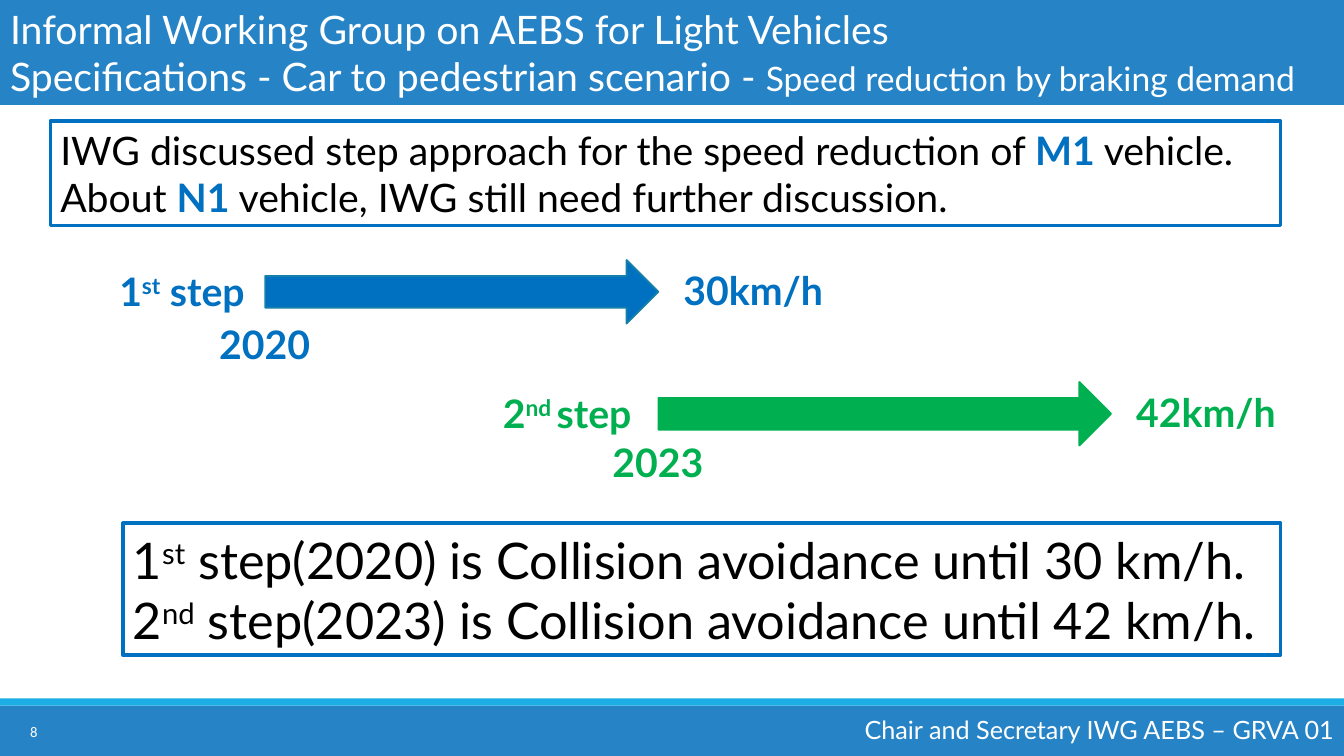
from pptx import Presentation
from pptx.dml.color import RGBColor
from pptx.enum.shapes import MSO_SHAPE as Shape
from pptx.enum.text import MSO_ANCHOR as Anchor, MSO_AUTO_SIZE as AutoSize, PP_ALIGN as Align
from pptx.util import Inches, Pt

BAND = RGBColor(0x26, 0x83, 0xC6)
STRIPE = RGBColor(0x1C, 0xAD, 0xE4)
BLUE = RGBColor(0x00, 0x70, 0xC0)
BLUE_EDGE = RGBColor(0x15, 0x80, 0xA9)
GREEN = RGBColor(0x00, 0xB0, 0x50)
WHITE = RGBColor(0xFF, 0xFF, 0xFF)
BLACK = RGBColor(0x00, 0x00, 0x00)
WIDTH, HEIGHT = 13.33, 7.5
LINE_HEIGHT = 0.57
SUPER = {"baseline": "30000"}

presentation = Presentation()
presentation.slide_width, presentation.slide_height = Inches(WIDTH), Inches(HEIGHT)
slide = presentation.slides.add_slide(presentation.slide_layouts[5])


def add_block(kind, box, fill=None, line=None, line_width=1.25):
    """Add a preset shape, or a text box when kind is None."""
    place = [Inches(length) for length in box]
    if kind is None:
        return slide.shapes.add_textbox(*place)
    shape = slide.shapes.add_shape(kind, *place)
    shape.shadow.inherit = False
    if fill is None:
        shape.fill.background()
    else:
        shape.fill.solid()
        shape.fill.fore_color.rgb = fill
    if line is None:
        shape.line.fill.background()
    else:
        shape.line.color.rgb = line
        shape.line.width = Pt(line_width)
    return shape


def write(shape, lines, size, color, align=Align.LEFT, anchor=Anchor.TOP, bold=False, name="Lato"):
    """Write lines of (text, format) runs; a format overrides the line's own."""
    frame = shape.text_frame
    frame.word_wrap = True
    frame.auto_size = AutoSize.NONE
    frame.vertical_anchor = anchor
    for index, runs in enumerate(lines):
        paragraph = frame.add_paragraph() if index else frame.paragraphs[0]
        paragraph.alignment = align
        for text, changes in runs:
            style = {"size": size, "color": color, "bold": bold, "name": name} | changes
            run = paragraph.add_run()
            run.text = text
            run.font.color.rgb = style.pop("color")
            run.font.size = Pt(style.pop("size"))
            if "baseline" in style:
                run.font._element.set("baseline", style.pop("baseline"))
            for key, value in style.items():
                setattr(run.font, key, value)


# Title band
title = slide.shapes.title
title.left, title.top, title.width, title.height = 0, 0, Inches(WIDTH), Inches(1.04)
title.fill.solid()
title.fill.fore_color.rgb = BAND
write(title, [
    [("Informal Working Group on AEBS for Light Vehicles", {})],
    [("Specifications - Car to pedestrian scenario - ", {}),
     ("Speed reduction by braking demand", {"size": 24})],
], 28, WHITE, anchor=Anchor.MIDDLE)

# Footer band with page number
add_block(Shape.RECTANGLE, (0, HEIGHT - 0.5, WIDTH, 0.5), BAND)
add_block(Shape.RECTANGLE, (0, HEIGHT - 0.57, WIDTH, 0.07), STRIPE)
write(add_block(None, (0, 7.06, 0.47, 0.4)), [[("8", {})]], 10.5, WHITE,
      Align.RIGHT, Anchor.MIDDLE, name="Calibri")
write(add_block(None, (8.42, 7.04, 4.91, 0.4)),
      [[("Chair and Secretary IWG AEBS – GRVA 01", {})]], 18, WHITE, Align.RIGHT)

# Framed statements
marked = {"color": BLUE, "bold": True}
introduction = [
    [("IWG discussed step approach for the speed reduction of ", {}), ("M1", marked), (" vehicle.", {})],
    [("About ", {}), ("N1", marked), (" vehicle, IWG still need further discussion.", {})],
]
conclusion = [
    [(number, {}), (suffix, SUPER), (f" step({year}) is Collision avoidance until {speed} km/h.", {})]
    for number, suffix, year, speed in (("1", "st", 2020, 30), ("2", "nd", 2023, 42))
]
for box, lines, size in (
    ((0.5, 1.2, 12.2, 1.04), introduction, 28),
    ((1.22, 5.19, 11.48, 1.31), conclusion, 36),
):
    frame = add_block(Shape.RECTANGLE, box, line=BLUE, line_width=2.5)
    write(frame, lines, size, BLACK, anchor=Anchor.MIDDLE)

# Steps: arrow, with its label before, speed after and year under its start
steps = [
    (2.63, 2.58, 3.9, BLUE, BLUE_EDGE, 0.97, 1.67, [("1", {}), ("st", SUPER), (" step", {})],
     "2020", 3.13, "30km/h"),
    (6.53, 3.79, 4.49, GREEN, GREEN, 4.74, 1.77, [("2", {}), ("nd ", SUPER), ("step", {})],
     "2023", 4.3, "42km/h"),
]
for left, top, length, color, edge, label_left, label_width, label, year, year_top, speed in steps:
    add_block(Shape.RIGHT_ARROW, (left, top, length, 0.63), color, edge)
    for box, runs in (
        ((label_left, top + 0.02, label_width, LINE_HEIGHT), label),
        ((left - 0.62, year_top, 1.23, LINE_HEIGHT), [(year, {})]),
        ((left + length, top + 0.01, 1.88, LINE_HEIGHT), [(speed, {})]),
    ):
        write(add_block(None, box), [runs], 28, color, Align.CENTER, bold=True)

presentation.save("out.pptx")
